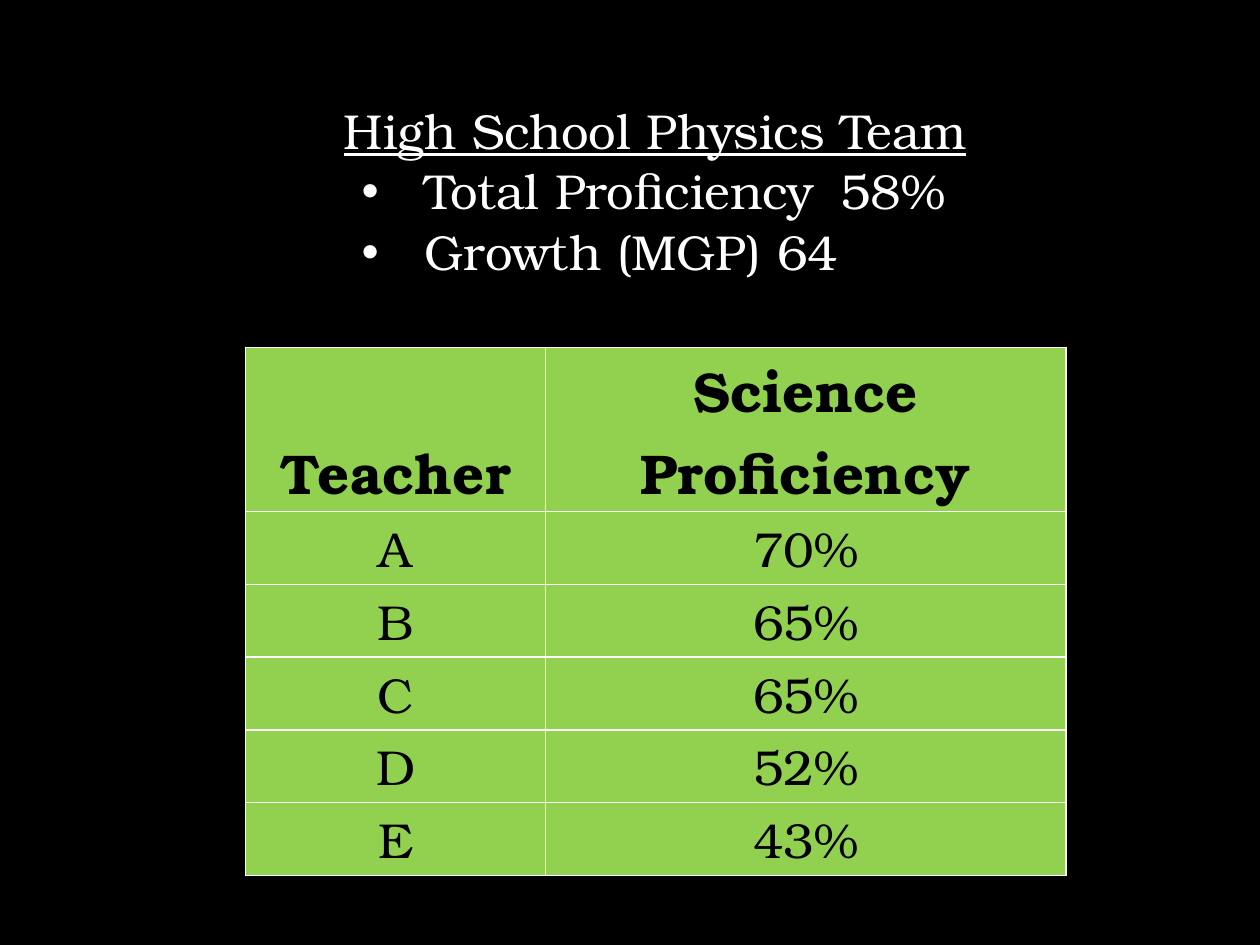
import pptx
import pptx.util
import pptx.dml.color
import pptx.enum.text
import pptx.oxml
import pptx.oxml.ns
from pptx.util import Pt

BLACK = pptx.dml.color.RGBColor(0x00, 0x00, 0x00)
WHITE = pptx.dml.color.RGBColor(0xFF, 0xFF, 0xFF)
GREEN = pptx.dml.color.RGBColor(0x92, 0xD0, 0x50)
FONT = "TeX Gyre Bonum"
CENTER = pptx.enum.text.PP_ALIGN.CENTER
NS = pptx.oxml.ns.nsdecls("a")


def style(p, size, color, bold=False):
    p.font.name = FONT
    p.font.size = Pt(size)
    p.font.color.rgb = color
    p.font.bold = bold


def add_borders(cell):
    tcPr = cell._tc.get_or_add_tcPr()
    for i, side in enumerate(("lnL", "lnR", "lnT", "lnB")):
        tcPr.insert(i, pptx.oxml.parse_xml(
            f'<a:{side} {NS} w="{Pt(1)}"><a:solidFill>'
            f'<a:srgbClr val="{WHITE}"/></a:solidFill></a:{side}>'))


prs = pptx.Presentation()
prs.slide_width, prs.slide_height = Pt(720), Pt(540)
s = prs.slides.add_slide(prs.slide_layouts[6])
s.background.fill.solid()
s.background.fill.fore_color.rgb = BLACK

# Team heading and results
sp = s.shapes.add_textbox(Pt(115.2), Pt(59.76), Pt(518.4), Pt(119.52))
tf = sp.text_frame
tf.word_wrap = True
tf.auto_size = pptx.enum.text.MSO_AUTO_SIZE.TEXT_TO_FIT_SHAPE
tf.margin_left = tf.margin_right = Pt(5.04)
tf.margin_top = tf.margin_bottom = Pt(2.88)
lines = ["High School Physics Team", "Total Proficiency \t58%", "Growth (MGP) \t64"]
for i, text in enumerate(lines):
    p = tf.add_paragraph() if i else tf.paragraphs[0]
    p.add_run().text = text
    style(p, 28, WHITE)
    p.line_spacing = 0.94
    p.space_before = Pt(5 if i else 10)
    p.space_after = Pt(2)
    if i:
        p.level = 1
        pPr = p._p.get_or_add_pPr()
        pPr.set("marL", str(Pt(122.4)))
        pPr.set("indent", str(Pt(-36)))
        for xml in (f'<a:buFont {NS} typeface="Arial"/>', f'<a:buChar {NS} char="•"/>'):
            pPr.insert_element_before(pptx.oxml.parse_xml(xml), "a:tabLst", "a:defRPr")
    else:
        p.alignment = CENTER
        p.font.underline = True

# Proficiency by teacher
rows = [("Teacher", "Science Proficiency"), ("A", "70%"), ("B", "65%"),
        ("C", "65%"), ("D", "52%"), ("E", "43%")]
table = s.shapes.add_table(len(rows), 2, Pt(140.4), Pt(198.72), Pt(468.72), Pt(291.6)).table
table.columns[0].width, table.columns[1].width = Pt(171.36), Pt(297.36)
for r, values in enumerate(rows):
    header = r == 0
    table.rows[r].height = Pt(84 if header else 41.6)
    for c, text in enumerate(values):
        cell = table.cell(r, c)
        cell.text = text
        cell.fill.solid()
        cell.fill.fore_color.rgb = GREEN
        cell.margin_left = cell.margin_right = cell.margin_top = cell.margin_bottom = 0
        anchor = pptx.enum.text.MSO_ANCHOR
        cell.vertical_anchor = anchor.BOTTOM if header else anchor.MIDDLE
        p = cell.text_frame.paragraphs[0]
        p.alignment = CENTER
        style(p, 32 if header else 28, BLACK, header)
        add_borders(cell)

prs.save("out.pptx")
